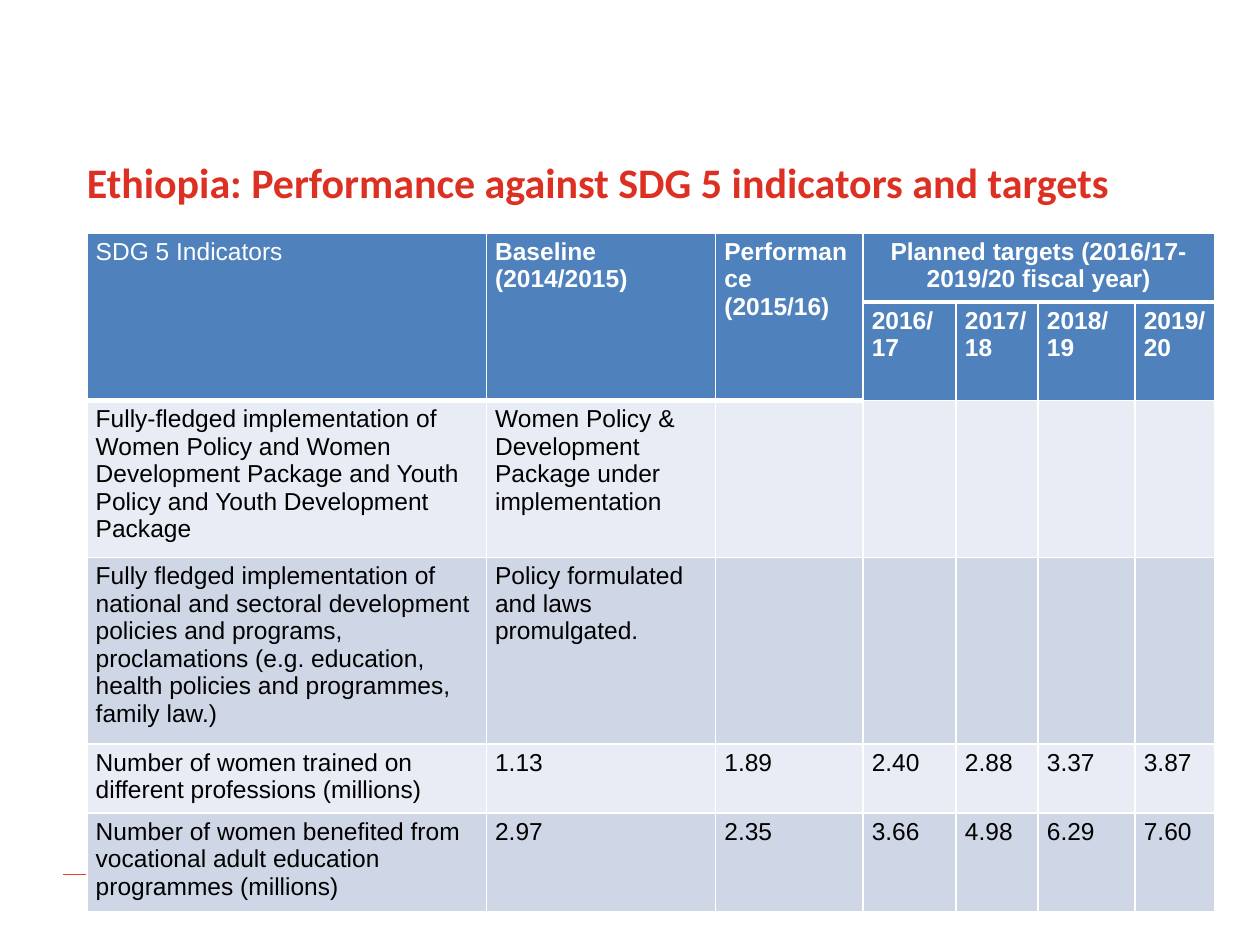
import pptx
import pptx.dml.color
import pptx.enum.shapes
import pptx.enum.text
import pptx.oxml
import pptx.util
from pptx.util import Inches

WHITE, BLACK, BLUE, RED = "FFFFFF", "000000", "4F81BD", "DC3122"
BANDS = ["E8ECF4", "CFD7E7"]
WIDTHS = [3.17, 1.82, 1.17, 0.74, 0.65, 0.77, 0.63]
HEIGHTS = [0.52, 0.73, 1.2, 1.43, 0.52, 0.75]
ROWS = [
    ["SDG 5 Indicators", "Baseline (2014/2015)", "Performance\n(2015/16)",
     "Planned targets (2016/17-2019/20 fiscal year)", "", "", ""],
    ["", "", "", "2016/\n17", "2017/18", "2018/\n19", "2019/20"],
    ["Fully-fledged implementation of Women Policy and Women Development Package "
     "and Youth Policy and Youth Development Package",
     "Women Policy & Development Package under implementation", "", "", "", "", ""],
    ["Fully fledged implementation of national and sectoral development policies "
     "and programs, proclamations (e.g. education, health policies and programmes, "
     "family law.)",
     "Policy formulated and laws promulgated.", "", "", "", "", ""],
    ["Number of women trained on different professions (millions)",
     "1.13", "1.89", "2.40", "2.88", "3.37", "3.87"],
    ["Number of women benefited from vocational adult education programmes (millions)",
     "2.97", "2.35", "3.66", "4.98", "6.29", "7.60"],
]


def paint(hue):
    """Turn a hex string into a colour."""
    return pptx.dml.color.RGBColor.from_string(hue)


def style(frame, face, size, hue, bold):
    """Format every run of a text frame."""
    for para in frame.paragraphs:
        for run in para.runs:
            run.font.name = face
            run.font.size = pptx.util.Pt(size)
            run.font.color.rgb = paint(hue)
            run.font.bold = bold


def edge(cell, top, base):
    """Give a cell white borders with its own top and bottom widths."""
    props = cell._tc.get_or_add_tcPr()
    space = pptx.oxml.ns.nsdecls("a")
    for side, width in zip("LRTB", (1, 1, top, base)):
        props.append(pptx.oxml.parse_xml(
            f'<a:ln{side} {space} w="{pptx.util.Pt(width)}"><a:solidFill>'
            f'<a:srgbClr val="{WHITE}"/></a:solidFill></a:ln{side}>'))


def add_rule(slide, left, top, width):
    """Draw the thin footer rule."""
    rule = slide.shapes.add_connector(
        pptx.enum.shapes.MSO_CONNECTOR.STRAIGHT, left, top, left + width, top)
    rule.line.color.rgb = paint("E54324")
    rule.line.width = pptx.util.Pt(0.75)
    rule._element.spPr.append(
        pptx.oxml.parse_xml(f'<a:effectLst {pptx.oxml.ns.nsdecls("a")}/>'))


def add_title(slide, left, top, width, height):
    """Write the slide title."""
    frame = slide.shapes.add_textbox(left, top, width, height).text_frame
    frame.word_wrap = True
    frame.margin_left = frame.margin_right = 0
    frame.margin_top = frame.margin_bottom = 0
    frame.text = "Ethiopia: Performance against SDG 5 indicators and targets"
    style(frame, "Calibri", 24, RED, True)


def add_grid(slide, left, top):
    """Build the table of indicators and targets."""
    grid = slide.shapes.add_table(
        len(ROWS), len(WIDTHS), left, top,
        Inches(sum(WIDTHS)), Inches(sum(HEIGHTS))).table
    for col, width in zip(grid.columns, WIDTHS):
        col.width = Inches(width)
    for row, height in zip(grid.rows, HEIGHTS):
        row.height = Inches(height)
    for i, texts in enumerate(ROWS):
        head = i < 2
        for j, text in enumerate(texts):
            cell = grid.cell(i, j)
            thick = 1 if j < 3 else 0
            edge(cell, 3 if i == thick + 1 else 1, 3 if i in (0, thick) else 1)
            cell.fill.solid()
            cell.fill.fore_color.rgb = paint(BLUE if head else BANDS[i % 2])
            cell.margin_left = cell.margin_right = Inches(0.07)
            cell.margin_top = cell.margin_bottom = Inches(0.04)
            cell.text_frame.text = text
            style(cell.text_frame, "Arial", 14, WHITE if head else BLACK,
                  head and j > 0)
    for j in range(3):
        grid.cell(0, j).merge(grid.cell(1, j))
    grid.cell(0, 3).merge(grid.cell(0, 6))
    grid.cell(0, 3).text_frame.paragraphs[0].alignment = pptx.enum.text.PP_ALIGN.CENTER


def main():
    """Build and save the slide."""
    deck = pptx.Presentation()
    deck.slide_width, deck.slide_height = Inches(10), Inches(7.5)
    slide = deck.slides.add_slide(deck.slide_layouts[6])
    add_rule(slide, Inches(0.5), Inches(6.94), Inches(9))
    add_title(slide, Inches(0.69), Inches(1.24), Inches(8.62), Inches(0.62))
    add_grid(slide, Inches(0.69), Inches(1.85))
    deck.save("out.pptx")


if __name__ == "__main__":
    main()
